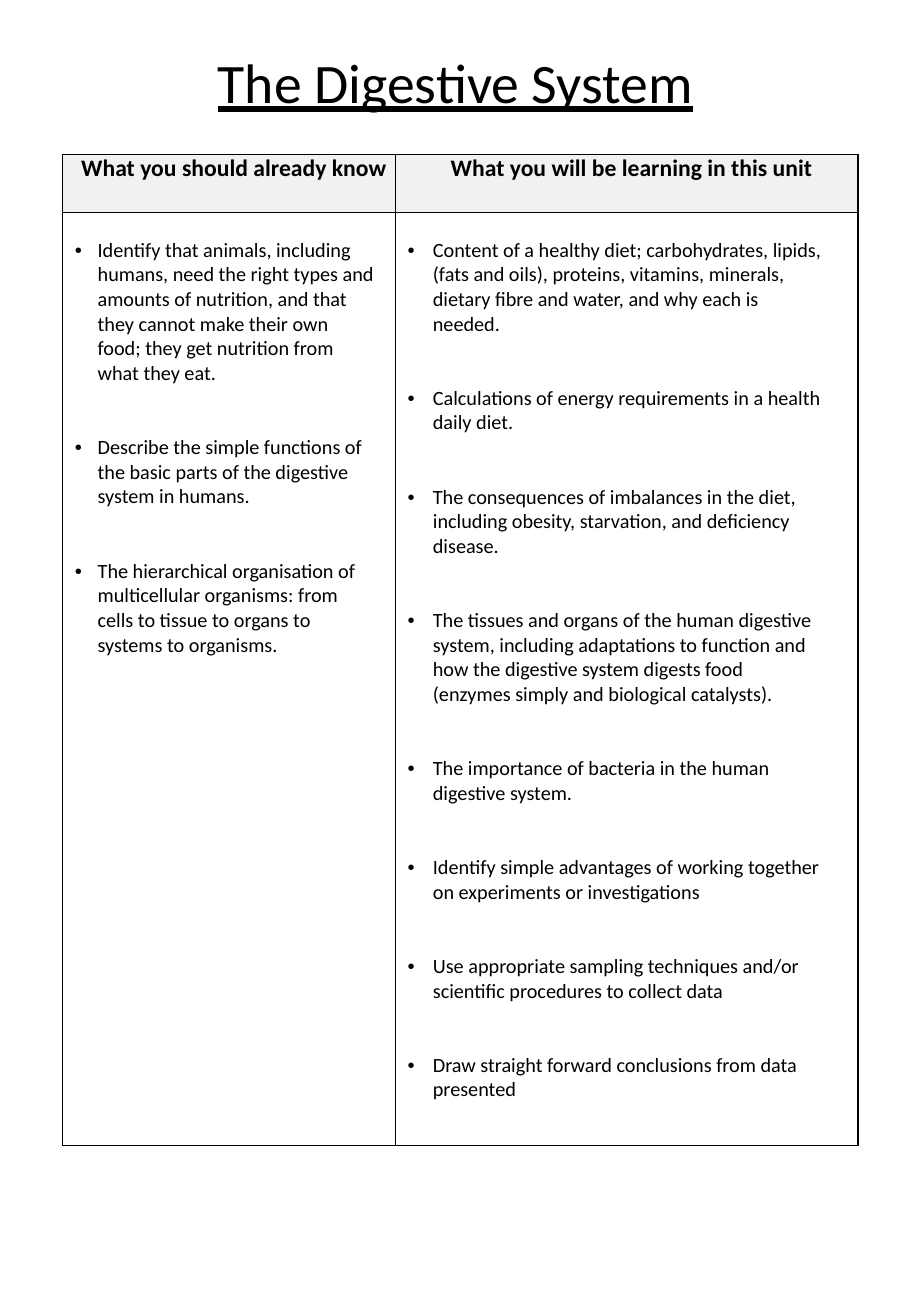
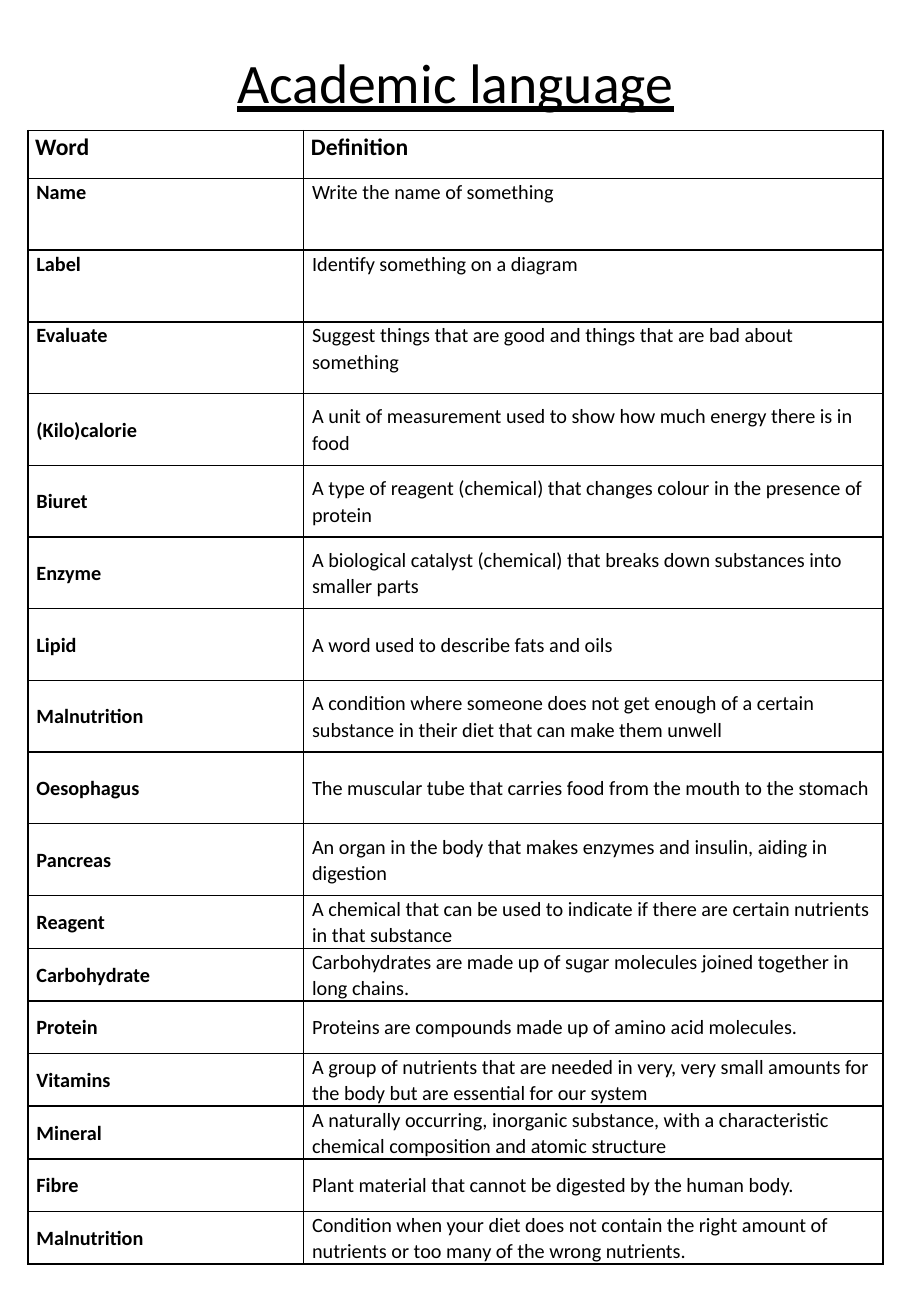
from lxml.etree import SubElement
from pptx import Presentation
from pptx.dml.color import RGBColor
from pptx.enum.text import MSO_ANCHOR, MSO_AUTO_SIZE, PP_ALIGN
from pptx.oxml.ns import qn
from pptx.util import Pt

TOP, MID = MSO_ANCHOR.TOP, MSO_ANCHOR.MIDDLE
LEFT, CENTER = PP_ALIGN.LEFT, PP_ALIGN.CENTER
FIXED = MSO_AUTO_SIZE.NONE

# Shared look
FONT = "Calibri"
INK, PAPER, SHADE = "000000", "FFFFFF", "F1F1F1"
HEAD = {"size": Pt(14), "bold": True}
TERM = {"size": Pt(12), "bold": True}
BODY = {"size": Pt(12), "bold": False}
NAME = {"size": Pt(33), "bold": False, "underline": True}
TITLE = (37, 24, 466, 53)

KNOWN = [
    "Identify that animals, including humans, need the right types and amounts of nutrition, "
    "and that they cannot make their own food; they get nutrition from what they eat.",
    "Describe the simple functions of the basic parts of the digestive system in humans.",
    "The hierarchical organisation of multicellular organisms: from cells to tissue to organs "
    "to systems to organisms.",
]
GOALS = [
    "Content of a healthy diet; carbohydrates, lipids, (fats and oils), proteins, vitamins, "
    "minerals, dietary fibre and water, and why each is needed.",
    "Calculations of energy requirements in a health daily diet.",
    "The consequences of imbalances in the diet, including obesity, starvation, and deficiency "
    "disease.",
    "The tissues and organs of the human digestive system, including adaptations to function "
    "and how the digestive system digests food (enzymes simply and biological catalysts).",
    "The importance of bacteria in the human digestive system.",
    "Identify simple advantages of working together on experiments or investigations",
    "Use appropriate sampling techniques and/or scientific procedures to collect data",
    "Draw straight forward conclusions from data presented",
]
WORDS = [
    ("Name", "Write the name of something"),
    ("Label", "Identify something on a diagram"),
    ("Evaluate", "Suggest things that are good and things that are bad about something"),
    ("(Kilo)calorie", "A unit of measurement used to show how much energy there is in food"),
    ("Biuret", "A type of reagent (chemical) that changes colour in the presence of protein"),
    ("Enzyme", "A biological catalyst (chemical) that breaks down substances into smaller parts"),
    ("Lipid", "A word used to describe fats and oils"),
    ("Malnutrition", "A condition where someone does not get enough of a certain substance in "
     "their diet that can make them unwell"),
    ("Oesophagus", "The muscular tube that carries food from the mouth to the stomach"),
    ("Pancreas", "An organ in the body that makes enzymes and insulin, aiding in digestion"),
    ("Reagent", "A chemical that can be used to indicate if there are certain nutrients in that "
     "substance"),
    ("Carbohydrate", "Carbohydrates are made up of sugar molecules joined together in long "
     "chains."),
    ("Protein", "Proteins are compounds made up of amino acid molecules."),
    ("Vitamins", "A group of nutrients that are needed in very, very small amounts for the body "
     "but are essential for our system"),
    ("Mineral", "A naturally occurring, inorganic substance, with a characteristic chemical "
     "composition and atomic structure"),
    ("Fibre", "Plant material that cannot be digested by the human body."),
    ("Malnutrition", "Condition when your diet does not contain the right amount of nutrients "
     "or too many of the wrong nutrients."),
]


def color(code):
    return RGBColor.from_string(code)


def put(item, form):
    for key, val in form.items():
        setattr(item, key, val)


def write(para, text, look, form):
    run = para.add_run()
    run.text = text
    put(para, form)
    put(run.font, {"name": FONT, **look})
    run.font.color.rgb = color(INK)


def bullet(para, left, hang):
    props = para._p.get_or_add_pPr()
    props.set("marL", str(Pt(left)))
    props.set("indent", str(-Pt(hang)))
    SubElement(props, qn("a:buFont"), typeface="Arial")
    SubElement(props, qn("a:buChar"), char="•")


def dress(cell, fill, pads, anchor=TOP):
    """Border, fill and insets (left, top, right, bottom) of a cell."""
    props = cell._tc.get_or_add_tcPr()
    for side in "LRTB":
        line = SubElement(props, qn("a:ln" + side), w=str(Pt(1)))
        paint = SubElement(line, qn("a:solidFill"))
        SubElement(paint, qn("a:srgbClr"), val=INK)
    cell.fill.solid()
    cell.fill.fore_color.rgb = color(fill)
    sides = ("left", "top", "right", "bottom")
    put(cell, {"margin_" + side: Pt(pad) for side, pad in zip(sides, pads)})
    cell.vertical_anchor = anchor


def grid(slide, left, top, cols, rows):
    frame = slide.shapes.add_table(len(rows), len(cols), Pt(left), Pt(top),
                                   Pt(sum(cols)), Pt(sum(rows)))
    table = frame.table
    put(table, {"first_row": False, "horz_banding": False})
    for col, wide in zip(table.columns, cols):
        col.width = Pt(wide)
    for row, high in zip(table.rows, rows):
        row.height = Pt(high)
    return table


def page(deck, text):
    """New slide with its underlined title."""
    slide = deck.slides.add_slide(deck.slide_layouts[5])
    title = slide.shapes.title
    put(title, dict(zip(("left", "top", "width", "height"), map(Pt, TITLE))))
    put(title.text_frame, {"auto_size": FIXED, "vertical_anchor": MID, "word_wrap": True})
    write(title.text_frame.paragraphs[0], text, NAME,
          {"alignment": CENTER, "line_spacing": 0.9})
    return slide


def bullets(cell, items, left, hang, right):
    dress(cell, PAPER, (0, 15, right, 0))
    frame = cell.text_frame
    for spot, item in enumerate(items):
        para = frame.add_paragraph() if spot else frame.paragraphs[0]
        bullet(para, left, hang)
        form = {"alignment": LEFT}
        if spot:
            form["space_before"] = Pt(29.3)
        write(para, item, BODY, form)


def outline(slide, left, top):
    """Prior knowledge beside the aims of the unit."""
    table = grid(slide, left, top, (197.3, 274.3), (34.5, 553))
    heads = ("What you should already know", "What you will be learning in this unit")
    for col, text in enumerate(heads):
        cell = table.cell(0, col)
        dress(cell, SHADE, (6, 0, 0, 0))
        write(cell.text_frame.paragraphs[0], text, HEAD, {"alignment": CENTER})
    bullets(table.cell(1, 0), KNOWN, 20.9, 13.5, 12)
    bullets(table.cell(1, 1), GOALS, 22.3, 15, 19.5)


def terms(slide, left, top):
    """Words and their definitions under a header row."""
    tall = 10
    rows = [28.4] + [42.5] * tall + [31] * (len(WORDS) - tall)
    table = grid(slide, left, top, (163.4, 343.4), rows)
    for row, pair in enumerate([("Word", "Definition")] + WORDS):
        pad = 5 if row else 4.3
        looks = (TERM, BODY) if row else (HEAD, HEAD)
        for col, text in enumerate(pair):
            cell = table.cell(row, col)
            dress(cell, PAPER, (pad, 0, pad, 0), MID if row > 3 else TOP)
            write(cell.text_frame.paragraphs[0], text, looks[col],
                  {"alignment": LEFT, "line_spacing": 1.07})


def main():
    deck = Presentation()
    put(deck, {"slide_width": Pt(540), "slide_height": Pt(780)})
    outline(page(deck, "The Digestive System"), 37, 91.5)
    terms(page(deck, "Academic language"), 16.6, 77.4)
    deck.save("out.pptx")


if __name__ == "__main__":
    main()
